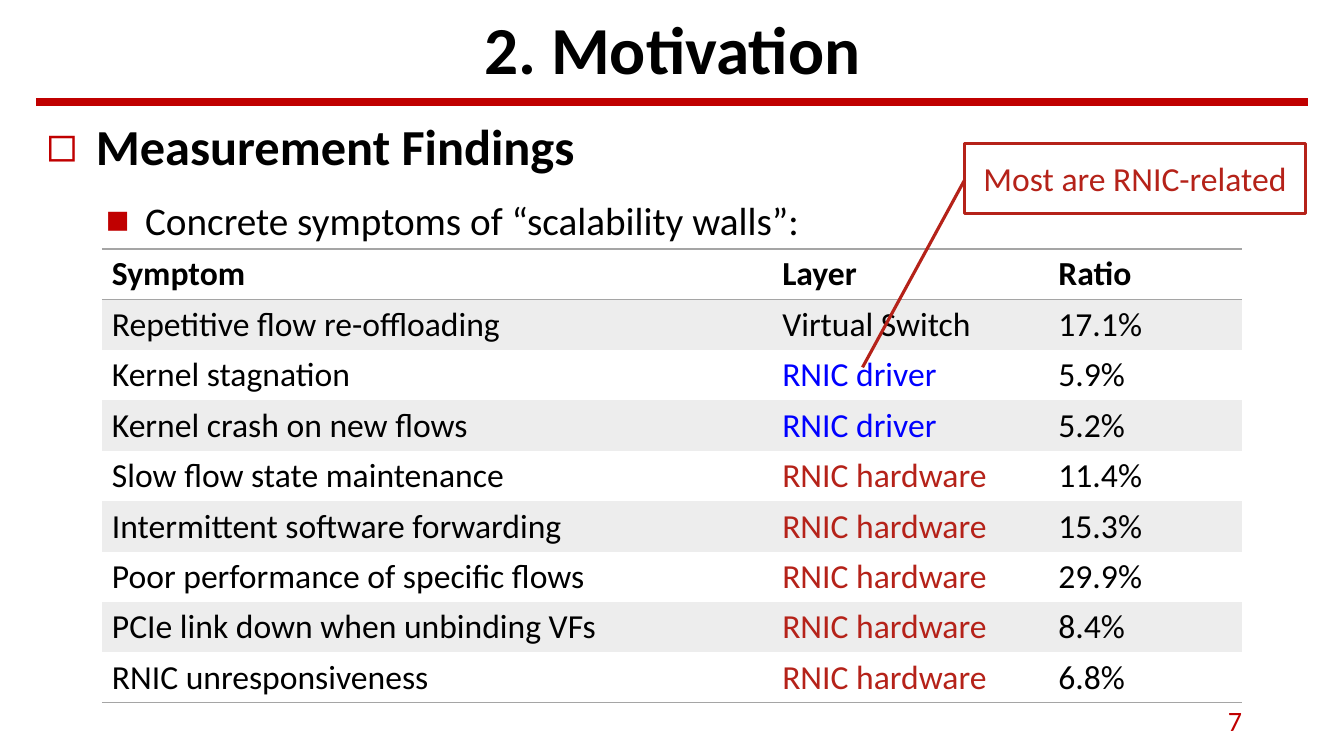
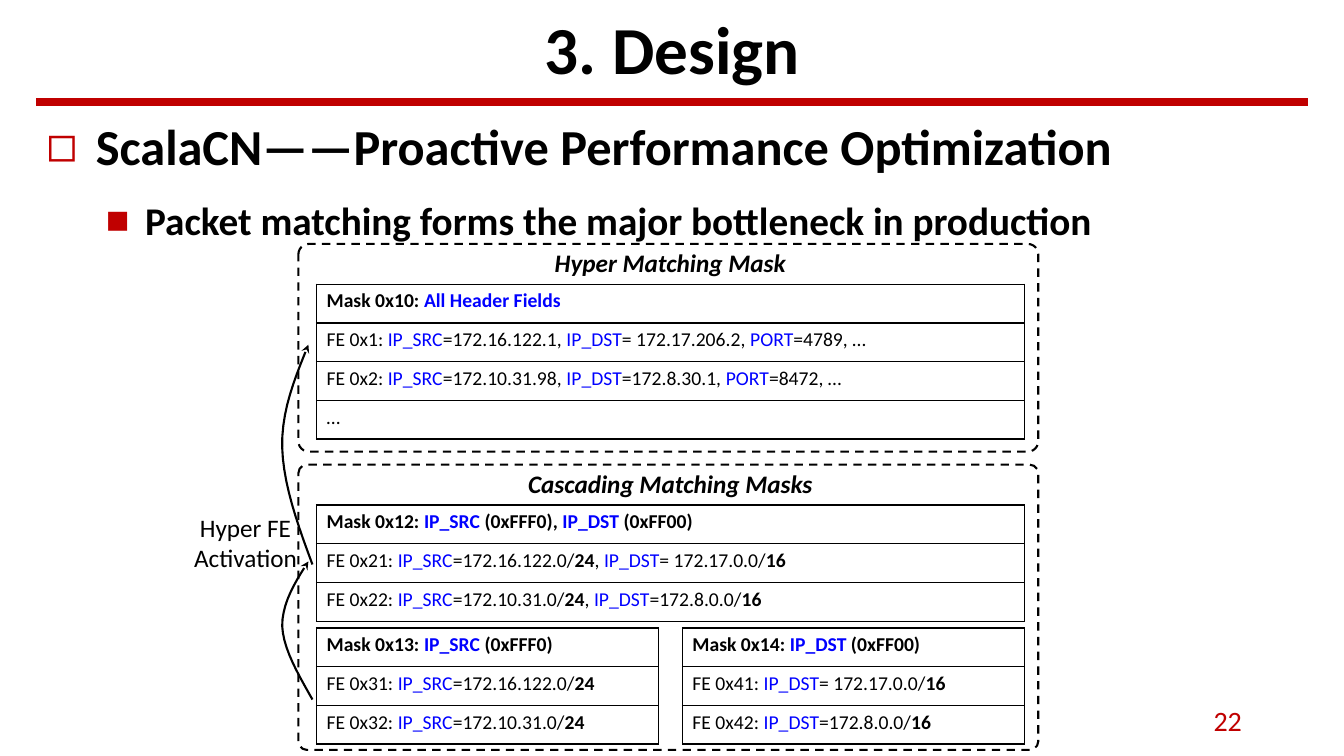
from dataclasses import dataclass

from lxml import etree
from pptx import Presentation
from pptx.dml.color import RGBColor
from pptx.enum.dml import MSO_LINE
from pptx.enum.shapes import MSO_CONNECTOR, MSO_SHAPE
from pptx.enum.text import MSO_ANCHOR, MSO_AUTO_SIZE, PP_ALIGN
from pptx.oxml.ns import qn
from pptx.util import Emu, Inches, Pt

# Shared style
FONT = "Calibri"
BLACK = RGBColor(0x00, 0x00, 0x00)
DEEP_RED = RGBColor(0xC0, 0x00, 0x00)
BRICK = RGBColor(0xB5, 0x22, 0x19)
BLUE = RGBColor(0x00, 0x00, 0xFF)
GRAY = RGBColor(0xA5, 0xA5, 0xA5)
BAND = RGBColor(0xED, 0xED, 0xED)
LEFT, CENTER, RIGHT = PP_ALIGN.LEFT, PP_ALIGN.CENTER, PP_ALIGN.RIGHT
TOP, MIDDLE = MSO_ANCHOR.TOP, MSO_ANCHOR.MIDDLE
DASH = MSO_LINE.DASH
NO_TABLE_STYLE = "{2D5ABB26-0587-4C30-8999-92F81FD0307C}"

SLIDE_W, SLIDE_H = Inches(13.33), Inches(7.5)


def across(percent: float) -> Emu:
    return Emu(round(SLIDE_W * percent / 100))


def down(percent: float) -> Emu:
    return Emu(round(SLIDE_H * percent / 100))


@dataclass(frozen=True)
class Area:
    """A rectangle in percent of the slide's width and height."""
    left: float
    top: float
    width: float
    height: float

    def emu(self) -> tuple[Emu, Emu, Emu, Emu]:
        return across(self.left), down(self.top), across(self.width), down(self.height)


@dataclass(frozen=True)
class Bullet:
    mark: str
    size: int
    margin: float
    hang: float
    before: int
    after: int


@dataclass(frozen=True)
class Symptom:
    name: str
    layer: str
    ratio: str


@dataclass(frozen=True)
class MaskTable:
    """Rows mark blue field names with ` and bold prefix lengths with *."""
    left: float
    top: float
    width: float
    rows: tuple[str, ...]
    caption: str = ""


TITLE_AREA = Area(6.9, 0, 86.25, 12.67)
BODY_AREA = Area(2.7, 15.47, 94.65, 80.93)
NUMBER_AREA = Area(70.65, 92.67, 22.5, 5.33)
RULE_Y = 13.47
BULLETS = (Bullet("◻", 36, 0.49, 0.49, 0, 12), Bullet("■", 28, 0.98, 0.39, 6, 6))

# Symptom table
SYMPTOM_AREA = Area(7.58, 32.93, 84.83, 60)
SYMPTOM_COLUMNS = (6.65, 2.74, 1.92)
CALLOUT_AREA = Area(71.78, 18.93, 25.35, 9.33)
CALLOUT_POINTS = (0.52, 0, 3.18, -0.3)
LAYER_COLORS = {"RNIC driver": BLUE, "RNIC hardware": BRICK}
SYMPTOMS = (
    Symptom("Symptom", "Layer", "Ratio"),
    Symptom("Repetitive flow re-offloading", "Virtual Switch", "17.1%"),
    Symptom("Kernel stagnation", "RNIC driver", "5.9%"),
    Symptom("Kernel crash on new flows", "RNIC driver", "5.2%"),
    Symptom("Slow flow state maintenance", "RNIC hardware", "11.4%"),
    Symptom("Intermittent software forwarding", "RNIC hardware", "15.3%"),
    Symptom("Poor performance of specific flows", "RNIC hardware", "29.9%"),
    Symptom("PCIe link down when unbinding VFs", "RNIC hardware", "8.4%"),
    Symptom("RNIC unresponsiveness", "RNIC hardware", "6.8%"),
)

# Matching masks
MASK_ROW = 5.12
MASK_LEFT, MASK_WIDTH, HALF_WIDTH = 23.55, 52.65, 25.43
HYPER_TOP, CASCADE_TOP, HALVES_TOP = 32.27, 61.47, 83.07
FRAMES = (
    (Area(22.2, HYPER_TOP, 55.05, 27.47), 0.05),
    (Area(22.2, CASCADE_TOP, 55.05, 37.73), 0.03),
)
MASK_TABLES = (
    MaskTable(MASK_LEFT, HYPER_TOP, MASK_WIDTH, (
        "Mask 0x10: `All Header Fields`",
        "FE 0x1: `IP_SRC`=172.16.122.1, `IP_DST`= 172.17.206.2, `PORT`=4789, …",
        "FE 0x2: `IP_SRC`=172.10.31.98, `IP_DST`=172.8.30.1, `PORT`=8472, …",
        "…",
    ), "Hyper Matching Mask"),
    MaskTable(MASK_LEFT, CASCADE_TOP, MASK_WIDTH, (
        "Mask 0x12: `IP_SRC` (0xFFF0), `IP_DST` (0xFF00)",
        "FE 0x21: `IP_SRC`=172.16.122.0/*24*, `IP_DST`= 172.17.0.0/*16*",
        "FE 0x22: `IP_SRC`=172.10.31.0/*24*, `IP_DST`=172.8.0.0/*16*",
    ), "Cascading Matching Masks"),
    MaskTable(MASK_LEFT, HALVES_TOP, HALF_WIDTH, (
        "Mask 0x13: `IP_SRC` (0xFFF0)",
        "FE 0x31: `IP_SRC`=172.16.122.0/*24*",
        "FE 0x32: `IP_SRC`=172.10.31.0/*24*",
    )),
    MaskTable(MASK_LEFT + MASK_WIDTH - HALF_WIDTH, HALVES_TOP, HALF_WIDTH, (
        "Mask 0x14: `IP_DST` (0xFF00)",
        "FE 0x41: `IP_DST`= 172.17.0.0/*16*",
        "FE 0x42: `IP_DST`=172.8.0.0/*16*",
    )),
)
# Each arrow is a chain of cubic curves: a start, then three points per curve
ACTIVATION_ARROWS = (
    ((23.25, 92.53), (22.2, 89.2), (21.08, 85.87), (21, 82.8),
     (21, 79.73), (21.98, 76.93), (22.95, 74.27)),
    ((23.25, 74.67), (22.13, 69.33), (21.08, 64), (21, 59.2),
     (20.93, 54.27), (21.98, 49.87), (22.95, 45.6)),
)
CURVE_STEPS = 10
LABEL_AREA = Area(13.65, 67.07, 9.23, 9.47)


# Text
def write(paragraph, text: str, *, size: int, color: RGBColor = BLACK, bold: bool = False,
          italic: bool = False, align: PP_ALIGN = LEFT) -> None:
    paragraph.alignment = align
    run = paragraph.add_run()
    run.text = text
    font = run.font
    font.name, font.size, font.bold, font.italic = FONT, Pt(size), bold, italic
    font.color.rgb = color


def write_marked(paragraph, text: str, *, size: int, bold: bool) -> None:
    for i, field in enumerate(text.split("`")):
        for j, part in enumerate(field.split("*")):
            if part:
                write(paragraph, part, size=size, color=BLUE if i % 2 else BLACK,
                      bold=bold or j % 2 == 1)


def add_box(slide, area: Area, lines: tuple[str, ...], *, size: int, color: RGBColor = BLACK,
            align: PP_ALIGN = LEFT, anchor: MSO_ANCHOR = TOP, wrap: bool = True) -> None:
    frame = slide.shapes.add_textbox(*area.emu()).text_frame
    frame.word_wrap, frame.vertical_anchor = wrap, anchor
    for i, line in enumerate(lines):
        paragraph = frame.add_paragraph() if i else frame.paragraphs[0]
        write(paragraph, line, size=size, color=color, align=align)


def set_bullet(paragraph, bullet: Bullet) -> None:
    props = paragraph._p.get_or_add_pPr()
    props.set("marL", str(Inches(bullet.margin)))
    props.set("indent", str(-Inches(bullet.hang)))
    color = etree.SubElement(props, qn("a:buClr"))
    etree.SubElement(color, qn("a:srgbClr"), val=str(DEEP_RED))
    etree.SubElement(props, qn("a:buChar"), char=bullet.mark)
    paragraph.line_spacing = 0.9
    paragraph.space_before, paragraph.space_after = Pt(bullet.before), Pt(bullet.after)


# Slide frame: title, rule, two bullets and number
def add_slide(deck, title: str, heading: str, point: str, number: str, *, bold_point: bool):
    slide = deck.slides.add_slide(deck.slide_layouts[1])
    heading_holder, body = slide.shapes.title, slide.placeholders[1]
    for holder, area in ((heading_holder, TITLE_AREA), (body, BODY_AREA)):
        holder.left, holder.top, holder.width, holder.height = area.emu()
        holder.text_frame.auto_size = MSO_AUTO_SIZE.NONE
    heading_holder.text_frame.vertical_anchor = MIDDLE
    write(heading_holder.text_frame.paragraphs[0], title, size=48, bold=True, align=CENTER)

    texts = ((heading, True), (point, bold_point))
    for level, (bullet, (text, bold)) in enumerate(zip(BULLETS, texts)):
        frame = body.text_frame
        paragraph = frame.add_paragraph() if level else frame.paragraphs[0]
        paragraph.level = level
        set_bullet(paragraph, bullet)
        write(paragraph, text, size=bullet.size, bold=bold)

    y = down(RULE_Y)
    rule = slide.shapes.add_connector(MSO_CONNECTOR.STRAIGHT, across(BODY_AREA.left), y,
                                      across(BODY_AREA.left + BODY_AREA.width), y)
    rule.line.color.rgb, rule.line.width = DEEP_RED, Pt(6)
    etree.SubElement(rule._element.spPr, qn("a:effectLst"))
    add_box(slide, NUMBER_AREA, (number,), size=20, color=DEEP_RED, align=RIGHT, anchor=MIDDLE)
    return slide


# Tables
def add_plain_table(slide, area: Area, rows: int, shares: tuple[float, ...]):
    frame = slide.shapes.add_table(rows, len(shares), *area.emu())
    frame.element.find(".//" + qn("a:tableStyleId")).text = NO_TABLE_STYLE
    table = frame.table
    table.first_row = table.horz_banding = False
    for column, share in zip(table.columns, shares):
        column.width = across(area.width * share / sum(shares))
    for row in table.rows:
        row.height = down(area.height / rows)
    return table


def style_cell(cell, sides: str, line: RGBColor, *, fill: RGBColor | None = None,
               anchor: MSO_ANCHOR = TOP) -> None:
    cell.vertical_anchor = anchor
    props = cell._tc.get_or_add_tcPr()
    for side in sides:
        border = etree.SubElement(props, qn("a:ln" + side), w=str(Pt(1)))
        solid = etree.SubElement(border, qn("a:solidFill"))
        etree.SubElement(solid, qn("a:srgbClr"), val=str(line))
    if fill is None:
        cell.fill.background()
    else:
        cell.fill.solid()
        cell.fill.fore_color.rgb = fill


def add_symptoms(slide) -> None:
    table = add_plain_table(slide, SYMPTOM_AREA, len(SYMPTOMS), SYMPTOM_COLUMNS)
    borders = {0: "TB", len(SYMPTOMS) - 1: "B"}
    for r, symptom in enumerate(SYMPTOMS):
        for c, text in enumerate((symptom.name, symptom.layer, symptom.ratio)):
            cell = table.cell(r, c)
            style_cell(cell, borders.get(r, ""), GRAY, fill=BAND if r % 2 else None,
                       anchor=MIDDLE)
            write(cell.text_frame.paragraphs[0], text, size=24, bold=r == 0,
                  color=LAYER_COLORS.get(text, BLACK))


def add_mask_table(slide, mask: MaskTable) -> None:
    captions = 1 if mask.caption else 0
    count = len(mask.rows) + captions
    area = Area(mask.left, mask.top, mask.width, count * MASK_ROW)
    table = add_plain_table(slide, area, count, (1,))
    if captions:
        style_cell(table.cell(0, 0), "B", BLACK)
        write(table.cell(0, 0).text_frame.paragraphs[0], mask.caption, size=18, bold=True,
              italic=True, align=CENTER)
    for r, text in enumerate(mask.rows):
        cell = table.cell(r + captions, 0)
        style_cell(cell, "LRTB", BLACK)
        write_marked(cell.text_frame.paragraphs[0], text, size=14, bold=r == 0)


# Outlines and arrows
def outline(shape, color: RGBColor, width: float) -> None:
    shape.shadow.inherit = False
    shape.fill.background()
    shape.line.color.rgb, shape.line.width = color, Pt(width)


def add_callout(slide, text: str) -> None:
    callout = slide.shapes.add_shape(MSO_SHAPE.LINE_CALLOUT_1, *CALLOUT_AREA.emu())
    for i, value in enumerate(CALLOUT_POINTS):
        callout.adjustments[i] = value
    outline(callout, BRICK, 2.25)
    callout.text_frame.vertical_anchor = MIDDLE
    write(callout.text_frame.paragraphs[0], text, size=24, color=BRICK, align=CENTER)


def add_frame(slide, area: Area, rounding: float) -> None:
    frame = slide.shapes.add_shape(MSO_SHAPE.ROUNDED_RECTANGLE, *area.emu())
    frame.adjustments[0] = rounding
    outline(frame, BLACK, 1.5)
    frame.line.dash_style = DASH


def curve_point(points, t: float) -> tuple[Emu, Emu]:
    weights = ((1 - t) ** 3, 3 * t * (1 - t) ** 2, 3 * t * t * (1 - t), t ** 3)
    return (across(sum(w * x for w, (x, _) in zip(weights, points))),
            down(sum(w * y for w, (_, y) in zip(weights, points))))


def add_curved_arrow(slide, points) -> None:
    builder = slide.shapes.build_freeform(across(points[0][0]), down(points[0][1]))
    for first in range(0, len(points) - 1, 3):
        builder.add_line_segments(
            [curve_point(points[first:first + 4], step / CURVE_STEPS)
             for step in range(1, CURVE_STEPS + 1)], close=False)
    arrow = builder.convert_to_shape()
    outline(arrow, BLACK, 1.5)
    etree.SubElement(arrow.line._get_or_add_ln(), qn("a:tailEnd"), type="stealth")


def main() -> None:
    deck = Presentation()
    deck.slide_width, deck.slide_height = SLIDE_W, SLIDE_H

    motivation = add_slide(deck, "2. Motivation", "Measurement Findings",
                           "Concrete symptoms of “scalability walls”:", "7", bold_point=False)
    add_symptoms(motivation)
    add_callout(motivation, "Most are RNIC-related")

    design = add_slide(deck, "3. Design", "ScalaCN——Proactive Performance Optimization",
                       "Packet matching forms the major bottleneck in production", "22",
                       bold_point=True)
    for area, rounding in FRAMES:
        add_frame(design, area, rounding)
    for mask in MASK_TABLES:
        add_mask_table(design, mask)
    for points in ACTIVATION_ARROWS:
        add_curved_arrow(design, points)
    add_box(design, LABEL_AREA, ("Hyper FE", "Activation"), size=18, align=CENTER, wrap=False)

    deck.save("out.pptx")


if __name__ == "__main__":
    main()
